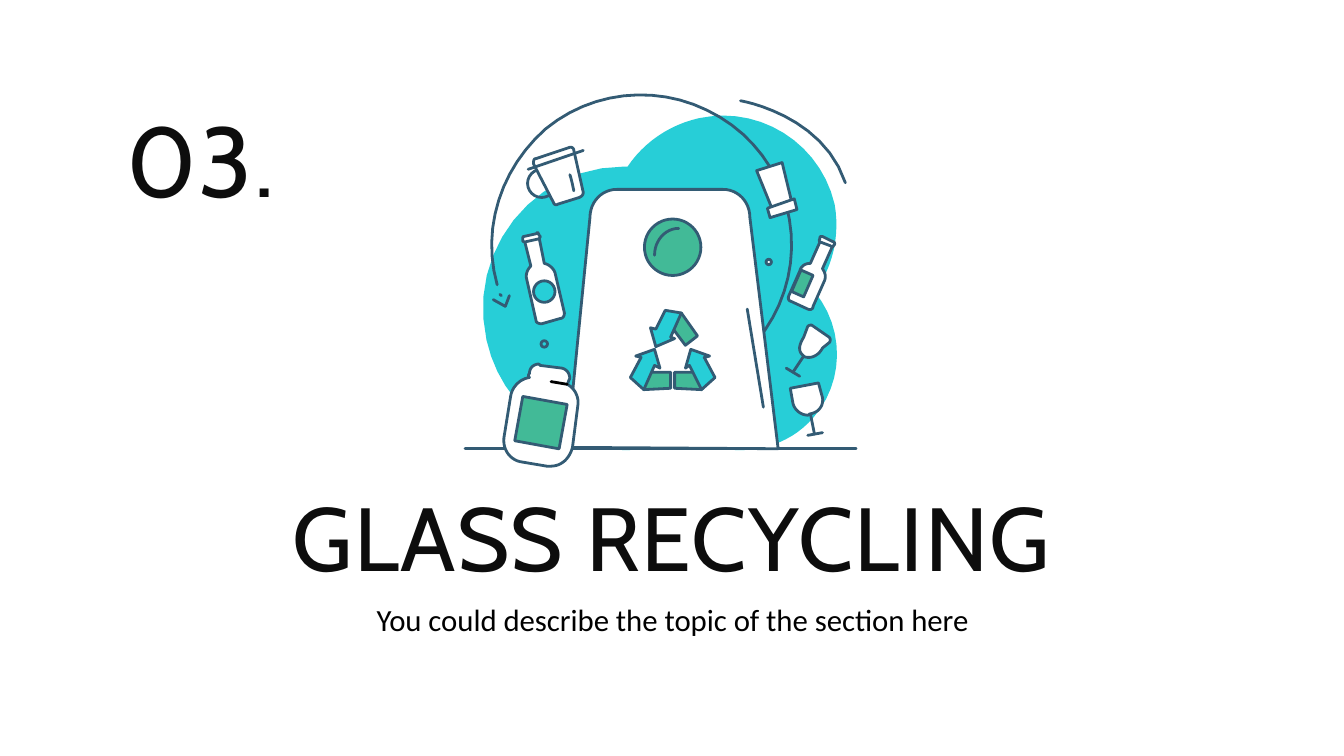
"""Build the section slide on glass recycling: number, title, subtitle and illustration."""
from lxml.etree import SubElement
from pptx import Presentation
from pptx.dml.color import RGBColor
from pptx.enum.shapes import MSO_CONNECTOR, MSO_SHAPE
from pptx.enum.text import MSO_ANCHOR, PP_ALIGN
from pptx.oxml.ns import qn
from pptx.util import Cm, Pt

COLORS = {"teal": "27CED7", "green": "42BA97", "white": "FFFFFF",
          "outline": "335B74", "black": "000000", "heading": "0D0D0D"}

HEADING = {"font": "Cabin", "color": "heading", "anchor": MSO_ANCHOR.BOTTOM,
           "line_spacing": 0.8, "tracking": 80}
BODY = {"font": "Calibri", "color": "black", "anchor": MSO_ANCHOR.TOP,
        "line_spacing": 1.0, "tracking": 0}
TEXTS = [
    ("GLASS RECYCLING", 48, (79, 356, 842, 92), HEADING),
    ("03.", 53, (80, 83, 139, 88), HEADING),
    ("You could describe the topic of the section here", 16.5, (187, 437, 627, 63), BODY),
]

# Points are hundredths of an inch: (x, y) is a corner, six numbers a cubic curve,
# and a lone (x, y, radius) a circle.
BACKDROP = [
    ("teal", None, [(538, 86), (532, 86, 526, 87, 520, 88), (498, 93, 479, 106, 467, 124),
                    (466, 124, 465, 124, 464, 124), (397, 124, 347, 187, 362, 253),
                    (373, 303, 417, 335, 465, 335), (480, 335, 496, 331, 512, 324),
                    (524, 332, 537, 335, 551, 335), (571, 335, 591, 327, 605, 311),
                    (628, 285, 629, 245, 606, 217), (620, 199, 625, 175, 621, 152),
                    (612, 113, 577, 86, 538, 86)]),
    (None, "outline", [(373, 220), (372, 219)]),
    (None, "outline", [(370, 212), (358, 170, 373, 125, 406, 96), (440, 68, 487, 63, 526, 82),
                       (566, 101, 590, 141, 589, 185), (588, 229, 561, 268, 521, 285)]),
    ("white", "outline", [(572, 195, 2)]),
    (None, "outline", [(405, 256, 2.4)]),
    (None, "outline", [(346, 334), (637, 334)]),
    (None, "outline", [(367, 223), (376, 228), (379, 220)]),
]
BEER_BOTTLE = [
    ("white", "outline", [(611, 178), (603, 196), (599, 196, 596, 198, 595, 202), (587, 220),
                          (586, 222, 587, 224, 588, 224), (601, 230),
                          (603, 231, 605, 230, 605, 228), (613, 210),
                          (615, 206, 614, 203, 612, 200), (620, 182)]),
    ("white", "outline", [(611, 176), (610, 176, 610, 177, 610, 178),
                          (609, 179, 610, 180, 610, 180), (618, 183),
                          (619, 184, 620, 184, 620, 183), (621, 182),
                          (621, 181, 621, 180, 620, 180), (612, 176)]),
    ("green", "outline", [(596, 201), (589, 217), (598, 221), (605, 205)]),
]
BIN = [
    (None, "outline", [(551, 75), (551, 75, 612, 85, 629, 136)]),
    ("white", "outline", [(459, 141), (448, 141, 439, 150, 439, 162), (422, 333), (579, 334),
                          (558, 162), (558, 150, 549, 141, 538, 141)]),
    ("green", "outline", [(500.5, 184, 21)]),
    (None, "outline", [(487, 190), (487, 179, 495, 170, 505, 170)]),
]
RECYCLING_SIGN = [
    ("green", "outline", [(526, 277), (502, 277), (502, 289), (522, 290)]),
    ("teal", "outline", [(514, 260), (510, 274), (513, 272), (522, 290), (532, 281),
                         (524, 266), (528, 265)]),
    ("green", "outline", [(475, 277), (479, 290), (499, 289), (499, 277)]),
    ("teal", "outline", [(487, 260), (473, 265), (477, 266), (469, 281), (479, 290),
                         (487, 272), (491, 274)]),
    ("green", "outline", [(507, 233), (495, 237), (510, 257), (519, 250)]),
    ("teal", "outline", [(495, 231), (488, 245), (484, 244), (488, 258), (502, 252),
                         (499, 251), (507, 233)]),
]
WINE_GLASSES = [
    (None, "outline", [(601, 298), (606, 323)]),
    (None, "outline", [(601, 324), (612, 322)]),
    ("white", "outline", [(609, 285), (588, 289), (590, 300), (591, 305, 596, 309, 601, 309),
                          (602, 309, 602, 308, 603, 308), (609, 307, 613, 302, 612, 296)]),
    (None, "outline", [(604, 256), (590, 277)]),
    (None, "outline", [(585, 274), (595, 280)]),
    ("white", "outline", [(603, 242), (602, 242, 601, 243, 601, 243), (598, 251),
                          (595, 256, 593, 261, 598, 265), (599, 266, 601, 266, 602, 266),
                          (606, 266, 610, 263, 612, 259), (617, 255),
                          (618, 254, 618, 252, 617, 251), (604, 242)]),
]
JAR = [
    ("white", "outline", [(401, 271), (397, 271, 394, 274, 394, 278), (393, 279, 393, 280, 394, 281),
                          (387, 282, 381, 288, 380, 295), (375, 326),
                          (374, 335, 380, 343, 389, 344), (407, 347),
                          (408, 347, 409, 347, 410, 347), (418, 347, 424, 341, 426, 333),
                          (430, 302), (431, 296, 428, 289, 422, 286),
                          (423, 285, 423, 283, 424, 282), (424, 278, 422, 275, 418, 274),
                          (402, 272)]),
    ("green", "outline", [(389, 295), (383, 328), (416, 334), (422, 301)]),
    (None, "black", [(410, 284), (422, 286)]),
]
WATER_BOTTLE = [
    ("white", "outline", [(401, 176), (390, 178), (395, 198), (392, 201, 391, 205, 392, 208),
                          (399, 239), (399, 240, 401, 241, 403, 241), (417, 237),
                          (419, 237, 420, 235, 420, 233), (413, 203),
                          (412, 200, 409, 197, 405, 196)]),
    ("white", "outline", [(400, 173), (399, 174), (390, 176), (389, 176, 389, 177, 389, 178),
                          (389, 179), (389, 180, 390, 180, 391, 180), (400, 178),
                          (401, 178, 402, 177, 402, 176), (401, 175),
                          (401, 174, 400, 173, 400, 173)]),
    ("teal", "outline", [(405, 217, 8)]),
]
CUP_AND_TUMBLER = [
    (None, "outline", [(403, 136.5, 10.5)]),
    ("white", "outline", [(431, 147), (415, 152), (414, 153, 412, 152, 412, 151), (397, 122),
                          (397, 120, 397, 118, 399, 118), (423, 110),
                          (425, 109, 427, 110, 427, 112), (434, 143),
                          (434, 145, 433, 146, 431, 147)]),
    (None, "outline", [(393, 126), (434, 112)]),
    (None, "outline", [(427, 142), (427, 142, 425, 132, 424, 130)]),
    ("white", "outline", [(582, 121), (563, 127), (576, 159), (590, 154)]),
    ("white", "outline", [(591, 148), (571, 155), (573, 162), (593, 156)]),
    (None, "outline", [(556, 230), (568, 303)]),
]
ILLUSTRATION = (BACKDROP + BEER_BOTTLE + BIN + RECYCLING_SIGN + WINE_GLASSES
                + JAR + WATER_BOTTLE + CUP_AND_TUMBLER)
CURVE_STEPS = 12


def length(hundredths):
    return Cm(hundredths * 0.0254)


def color(name):
    return RGBColor.from_string(COLORS[name])


def flatten(points):
    corners = [points[0]]
    for point in points[1:]:
        if len(point) == 2:
            corners.append(point)
            continue
        knots = [corners[-1], point[:2], point[2:4], point[4:]]
        for step in range(1, CURVE_STEPS + 1):
            t = step / CURVE_STEPS
            weights = ((1 - t) ** 3, 3 * t * (1 - t) ** 2, 3 * t * t * (1 - t), t ** 3)
            corners.append(tuple(sum(w * knot[axis] for w, knot in zip(weights, knots))
                                 for axis in (0, 1)))
    return [(length(x), length(y)) for x, y in corners]


def draw(shapes, fill, stroke, points):
    if len(points[0]) == 3:
        x, y, radius = points[0]
        box = (x - radius, y - radius, 2 * radius, 2 * radius)
        part = shapes.add_shape(MSO_SHAPE.OVAL, *map(length, box))
    elif len(points) == 2 and len(points[1]) == 2:
        ends = [length(value) for point in points for value in point]
        part = shapes.add_connector(MSO_CONNECTOR.STRAIGHT, *ends)
    else:
        start, *rest = flatten(points)
        builder = shapes.build_freeform(*start, scale=1.0)
        builder.add_line_segments(rest, close=fill is not None)
        part = builder.convert_to_shape()
    if hasattr(part, "fill"):
        part.shadow.inherit = False
        if fill:
            part.fill.solid()
            part.fill.fore_color.rgb = color(fill)
        else:
            part.fill.background()
    if stroke:
        part.line.color.rgb = color(stroke)
        part.line.width = Pt(1.5)
        pen = part.line._get_or_add_ln()
        pen.set("cap", "rnd")
        SubElement(pen, qn("a:round"))
    else:
        part.line.fill.background()
    if not hasattr(part, "fill"):
        SubElement(part._element.spPr, qn("a:effectLst"))


def write(slide, words, size, box, style):
    frame = slide.shapes.add_textbox(*map(length, box)).text_frame
    settings = {"word_wrap": True, "vertical_anchor": style["anchor"]}
    settings |= {f"margin_{side}": Cm(0.25) for side in ("left", "top", "right", "bottom")}
    for name, value in settings.items():
        setattr(frame, name, value)
    line = frame.paragraphs[0]
    line.alignment = PP_ALIGN.CENTER
    line.line_spacing = style["line_spacing"]
    run = line.add_run()
    run.text = words
    for name, value in {"name": style["font"], "size": Pt(size)}.items():
        setattr(run.font, name, value)
    run.font.color.rgb = color(style["color"])
    run._r.get_or_add_rPr().set("spc", str(style["tracking"]))


def main():
    deck = Presentation()
    deck.slide_width, deck.slide_height = Cm(25.4), Cm(14.29)
    slide = deck.slides.add_slide(deck.slide_layouts[6])
    for text in TEXTS:
        write(slide, *text)
    illustration = slide.shapes.add_group_shape()
    for part in ILLUSTRATION:
        draw(illustration.shapes, *part)
    deck.save("out.pptx")


if __name__ == "__main__":
    main()
